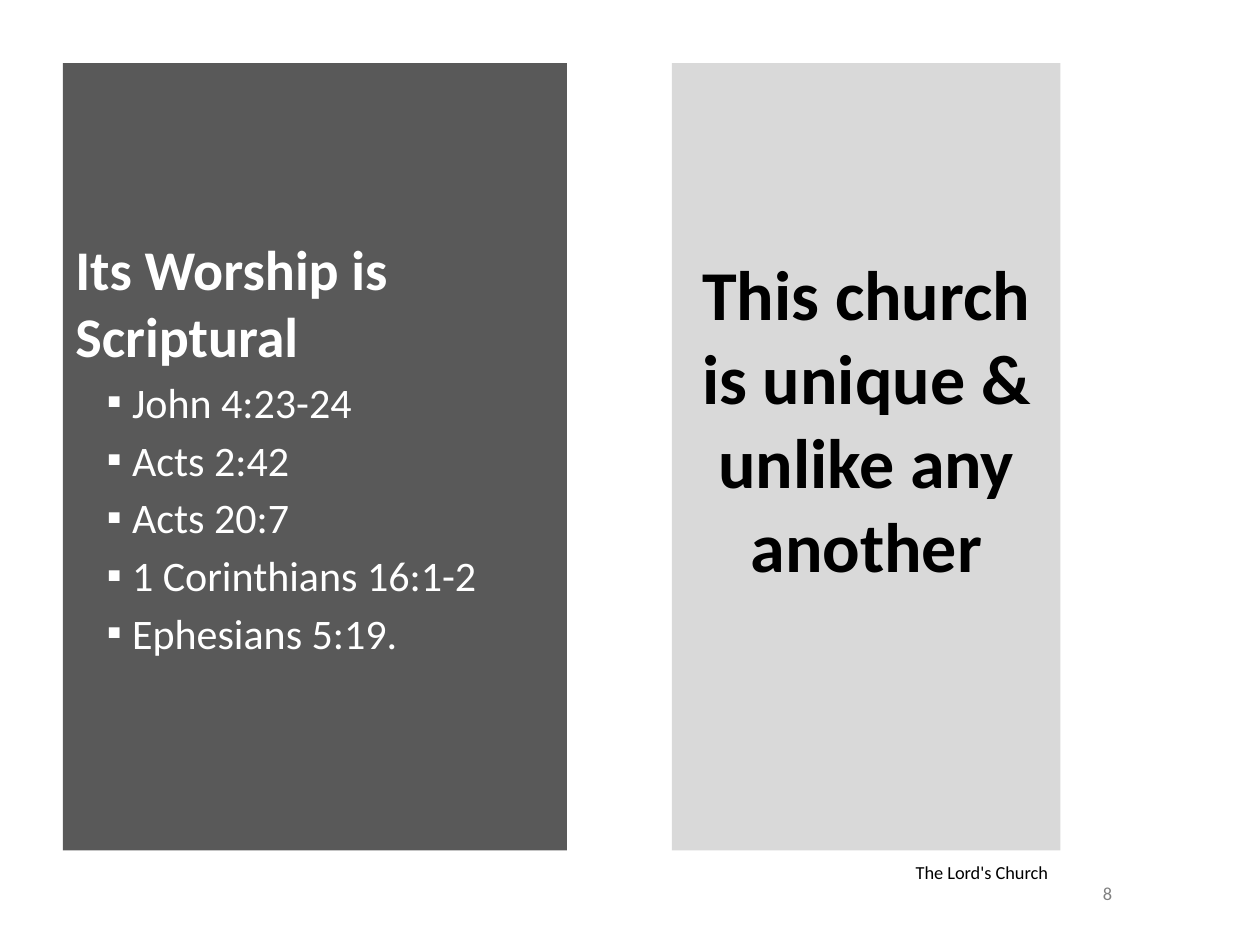
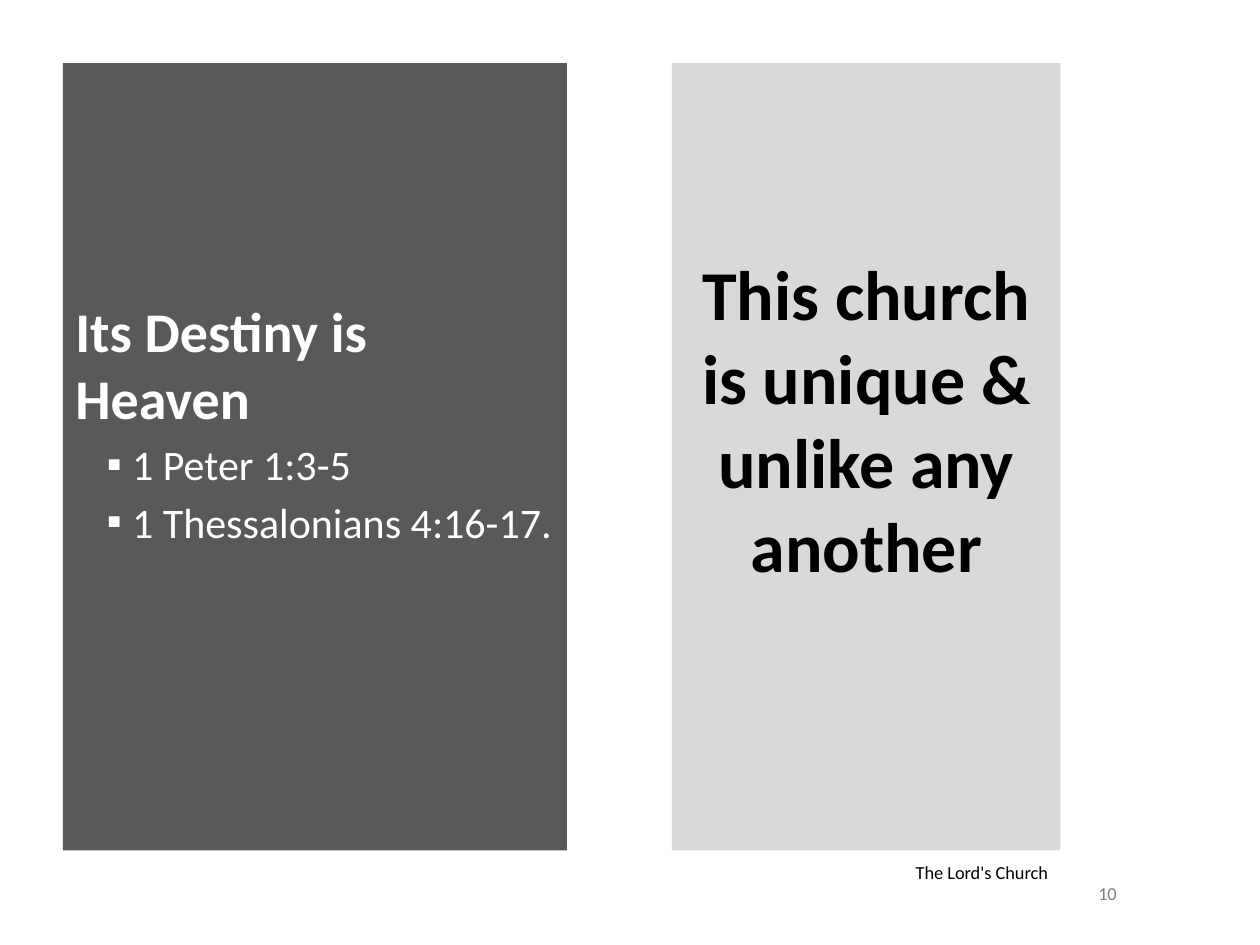
import pptx
import pptx.dml.color
import pptx.enum.shapes
import pptx.enum.text
import pptx.util
from lxml import etree
from pptx.oxml.ns import qn

Pt = pptx.util.Pt
ALIGN = pptx.enum.text.PP_ALIGN
ANCHOR = pptx.enum.text.MSO_ANCHOR

TITLE = "This church is unique & unlike any another"
FOOTER = "The Lord's Church"
SLIDES = [
    {
        "number": "8",
        "heading": "Its Worship is Scriptural",
        "verses": ["John 4:23-24", "Acts 2:42", "Acts 20:7", "1 Corinthians 16:1-2", "Ephesians 5:19."],
        "lift": 12,
    },
    {
        "number": "10",
        "heading": "Its Destiny is Heaven",
        "verses": ["1 Peter 1:3-5", "1 Thessalonians 4:16-17."],
        "lift": 40,
    },
]

FONT = "Calibri"
WHITE, BLACK, GRAY = "FFFFFF", "000000", "808080"
DARK_PANEL, LIGHT_PANEL = "595959", "D9D9D9"
PANEL_TOP, PANEL_HEIGHT = 36, 450
BODY_LEFT, BODY_WIDTH = 36, 288
TITLE_LEFT, TITLE_WIDTH = 384, 222
TITLE_LIFT = 44
INSET = 3.6
VERSE_GAP = 4.2


def color(value):
    return pptx.dml.color.RGBColor.from_string(value)


def prepare_frame(shape, anchor, lift=0):
    frame = shape.text_frame
    frame.word_wrap = True
    frame.vertical_anchor = anchor
    frame.margin_bottom = Pt(INSET + lift)
    return frame


def add_panel(slide, left, width, fill, lift):
    shape = slide.shapes.add_shape(
        pptx.enum.shapes.MSO_SHAPE.RECTANGLE, Pt(left), Pt(PANEL_TOP), Pt(width), Pt(PANEL_HEIGHT))
    shape.shadow.inherit = False
    shape.fill.solid()
    shape.fill.fore_color.rgb = color(fill)
    shape.line.fill.background()
    return prepare_frame(shape, ANCHOR.MIDDLE, lift)


def write(paragraph, text, size, text_color, align=ALIGN.LEFT, bold=False):
    paragraph.alignment = align
    run = paragraph.add_run()
    run.text = text
    run.font.name = FONT
    run.font.size = Pt(size)
    run.font.bold = bold
    run.font.color.rgb = color(text_color)


def add_bullet(paragraph):
    properties = paragraph._p.get_or_add_pPr()
    properties.set("lvl", "1")
    properties.set("marL", str(Pt(32.4)))
    properties.set("indent", str(Pt(-14.4)))
    bullet_color = etree.SubElement(properties, qn("a:buClr"))
    etree.SubElement(bullet_color, qn("a:srgbClr"), val=WHITE)
    etree.SubElement(properties, qn("a:buFont"), typeface=FONT)
    etree.SubElement(properties, qn("a:buChar"), char="▪")


def add_label(slide, left, top, width, text, text_color, align, anchor):
    box = slide.shapes.add_textbox(Pt(left), Pt(top), Pt(width), Pt(12.24))
    frame = prepare_frame(box, anchor)
    write(frame.paragraphs[0], text, 10.5, text_color, align)


def add_church_slide(presentation, content):
    slide = presentation.slides.add_slide(presentation.slide_layouts[6])

    body = add_panel(slide, BODY_LEFT, BODY_WIDTH, DARK_PANEL, content["lift"])
    write(body.paragraphs[0], content["heading"], 32, WHITE, bold=True)
    for verse in content["verses"]:
        paragraph = body.add_paragraph()
        add_bullet(paragraph)
        paragraph.space_before = Pt(VERSE_GAP)
        write(paragraph, verse, 24, WHITE)

    title = add_panel(slide, TITLE_LEFT, TITLE_WIDTH, LIGHT_PANEL, TITLE_LIFT)
    write(title.paragraphs[0], TITLE, 40, BLACK, ALIGN.CENTER, bold=True)

    add_label(slide, 612, 504, 41.76, content["number"], GRAY, ALIGN.CENTER, ANCHOR.MIDDLE)
    add_label(slide, TITLE_LEFT, 496, TITLE_WIDTH, FOOTER, BLACK, ALIGN.RIGHT, ANCHOR.BOTTOM)


def main():
    presentation = pptx.Presentation()
    presentation.slide_width = Pt(720)
    presentation.slide_height = Pt(540)
    for content in SLIDES:
        add_church_slide(presentation, content)
    presentation.save("out.pptx")


if __name__ == "__main__":
    main()
